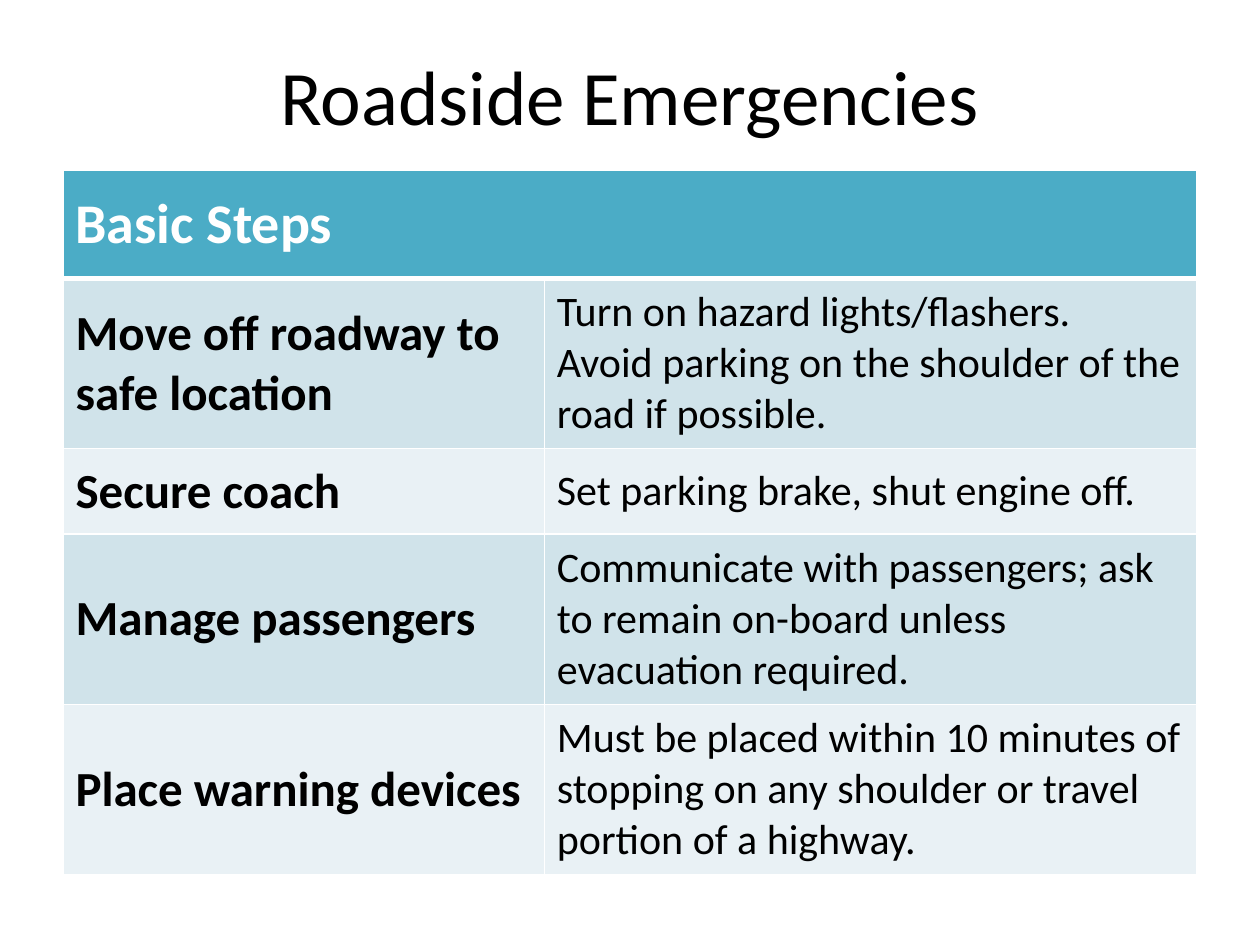
from dataclasses import dataclass

from lxml.etree import SubElement
from pptx import Presentation
from pptx.dml.color import RGBColor
from pptx.enum.text import MSO_ANCHOR, PP_ALIGN
from pptx.oxml.ns import qn
from pptx.util import Inches, Pt


@dataclass(frozen=True)
class Theme:
    """Colours, font and type sizes of the slide."""
    font: str = "Calibri"
    ink: str = "000000"
    paper: str = "FFFFFF"
    header: str = "4BACC6"
    bands: tuple = ("D0E3EA", "E9F1F5")
    title_size: int = 44
    header_size: int = 32
    step_size: int = 28
    detail_size: int = 24
    rule: int = 1
    header_rule: int = 3


STEPS = [
    ("Move off roadway to safe location",
     ["Turn on hazard lights/flashers.",
      "Avoid parking on the shoulder of the road if possible."]),
    ("Secure coach", ["Set parking brake, shut engine off."]),
    ("Manage passengers",
     ["Communicate with passengers; ask to remain on-board unless evacuation required."]),
    ("Place warning devices",
     ["Must be placed within 10 minutes of stopping on any shoulder or travel portion of a highway."]),
]
COLUMN_WIDTHS = [3.82, 5.18]
ROW_HEIGHTS = [0.86, 1.35, 0.68, 1.35, 1.35]


class SlideBuilder:
    """Holds the theme and the current slide and draws its elements."""

    def __init__(self, deck, theme):
        """Add a title-only page to the deck."""
        self.theme = theme
        self.width, self.height = deck.slide_width, deck.slide_height
        self.page = deck.slides.add_slide(deck.slide_layouts[5])

    def area(self, left, top, width, height):
        """Turn shares of the slide into lengths."""
        return (int(left * self.width), int(top * self.height),
                int(width * self.width), int(height * self.height))

    def add_lines(self, frame, lines, size, color, bold=False, align=PP_ALIGN.LEFT):
        """Fill a text frame with one paragraph per line."""
        for index, line in enumerate(lines):
            para = frame.add_paragraph() if index else frame.paragraphs[0]
            para.alignment = align
            span = para.add_run()
            span.text = line
            span.font.name = self.theme.font
            span.font.size = Pt(size)
            span.font.bold = bold
            span.font.color.rgb = RGBColor.from_string(color)

    def title(self, text, *shares):
        """Place and fill the title placeholder."""
        box = self.page.shapes.title
        box.left, box.top, box.width, box.height = self.area(*shares)
        box.text_frame.vertical_anchor = MSO_ANCHOR.MIDDLE
        self.add_lines(box.text_frame, [text], self.theme.title_size,
                       self.theme.ink, align=PP_ALIGN.CENTER)

    def style_cell(self, cell, fill, top_rule, bottom_rule):
        """Give a cell its borders, fill and vertical anchor."""
        properties = cell._tc.get_or_add_tcPr()
        rules = {"L": self.theme.rule, "R": self.theme.rule,
                 "T": top_rule, "B": bottom_rule}
        for side, points in rules.items():
            line = SubElement(properties, qn(f"a:ln{side}"), w=str(Pt(points)))
            solid = SubElement(line, qn("a:solidFill"))
            SubElement(solid, qn("a:srgbClr"), val=self.theme.paper)
        cell.fill.solid()
        cell.fill.fore_color.rgb = RGBColor.from_string(fill)
        cell.vertical_anchor = MSO_ANCHOR.MIDDLE

    def steps_table(self, heading, steps, *shares):
        """Draw the table of steps under a merged heading row."""
        theme = self.theme
        table = self.page.shapes.add_table(
            len(steps) + 1, len(COLUMN_WIDTHS), *self.area(*shares)).table
        for column, width in zip(table.columns, COLUMN_WIDTHS):
            column.width = Inches(width)
        for index, (row, height) in enumerate(zip(table.rows, ROW_HEIGHTS)):
            row.height = Inches(height)
            fill = theme.bands[(index - 1) % 2] if index else theme.header
            top_rule = theme.header_rule if index == 1 else theme.rule
            bottom_rule = theme.rule if index else theme.header_rule
            for cell in row.cells:
                self.style_cell(cell, fill, top_rule, bottom_rule)
        table.cell(0, 0).merge(table.cell(0, 1))
        self.add_lines(table.cell(0, 0).text_frame, [heading],
                       theme.header_size, theme.paper, bold=True)
        for index, (step, details) in enumerate(steps, 1):
            self.add_lines(table.cell(index, 0).text_frame, [step],
                           theme.step_size, theme.ink, bold=True)
            self.add_lines(table.cell(index, 1).text_frame, details,
                           theme.detail_size, theme.ink)


def main():
    """Build and save the deck."""
    deck = Presentation()
    deck.slide_width, deck.slide_height = Inches(10), Inches(7.5)
    builder = SlideBuilder(deck, Theme())
    builder.title("Roadside Emergencies", 0.05, 0.03, 0.9, 0.14)
    builder.steps_table("Basic Steps", STEPS, 0.05, 0.18, 0.9, 0.74)
    deck.save("out.pptx")


if __name__ == "__main__":
    main()
